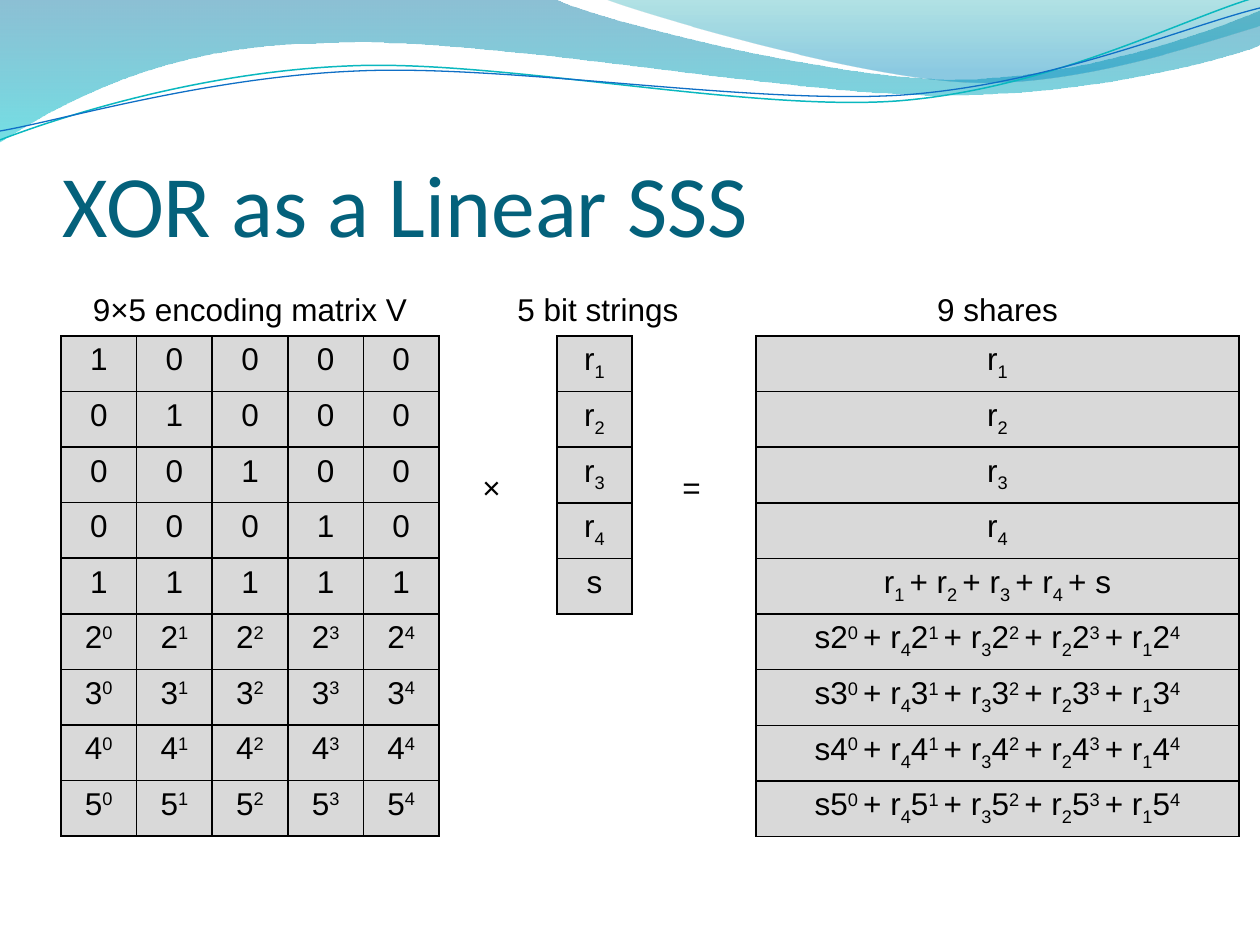
"""Build the slide that shows XOR secret sharing as a matrix product."""
import math
from itertools import accumulate, chain, groupby

from lxml import etree
from pptx import Presentation
from pptx import util as u
from pptx.dml.color import RGBColor
from pptx.enum import text
from pptx.oxml.ns import qn

PX = 7257.6
LEFT, CENTER = text.PP_ALIGN.LEFT, text.PP_ALIGN.CENTER
SUBS, SUPS = "₀₁₂₃₄₅", "⁰¹²³⁴⁵"
BASES, DEGREES = range(2, 6), range(5)

TITLE = ("XOR as a Linear SSS", 63, 97, 1134, 158)
LABELS = [
    ("9×5 encoding matrix V", 61, 284, 378, CENTER, True),
    ("5 bit strings", 472, 284, 252, CENTER, True),
    ("9 shares", 756, 284, 483, CENTER, True),
    ("×", 470, 462, 44, LEFT, False),
    ("=", 670, 462, 44, LEFT, False),
]

IDENTITY = [[str(int(row == col)) for col in DEGREES] for row in range(4)]
POWERS = [[f"{base}{SUPS[degree]}" for degree in DEGREES] for base in BASES]
SECRETS = ["r₁", "r₂", "r₃", "r₄", "s"]
MIRRORED = ["s", "r₄", "r₃", "r₂", "r₁"]
SUMS = [" + ".join(SECRETS)] + [
    " + ".join(secret + power for secret, power in zip(MIRRORED, row)) for row in POWERS
]
TABLE_TOP, ROW_HEIGHT = 336, 500 / 9
TABLES = [
    (61, 378, IDENTITY + [["1"] * 5] + POWERS),
    (557, 75, [[secret] for secret in SECRETS]),
    (756, 483, [[share] for share in SECRETS[:4] + SUMS]),
]

# Each step holds one point for a straight line or three for a curve.
BANDS = [
    ([[(0, -1)], [(554, -1)], [(600, 21), (837, 79), (955, 79)],
      [(1075, 79), (1207, 33), (1260, 11)], [(1261, 45)],
      [(1239, 55), (1096, 96), (940, 95)], [(784, 95), (481, 35), (324, 43)],
      [(163, 44), (58, 105), (-1, 142)], [(0, -1)]],
     [(0, "0074A1", 45), (1, "00C6CF", 55)]),
    ([[(604, -1)], [(641, 14), (859, 78), (969, 82)],
      [(1079, 87), (1211, 40), (1260, 26)], [(1260, 0)], [(604, -1)]],
     [(0, "00A1A9", 30), (0.8, "008BBF", 45)]),
]
WAVES = [
    ([[(0, 140)], [(60, 117), (199, 72), (349, 66)],
      [(498, 59), (747, 112), (898, 101)], [(1050, 89), (1182, 19), (1257, -3)]],
     (629, 72), "0AB8BF", 0.85),
    ([[(0, 131)], [(59, 121), (207, 77), (357, 71)],
      [(508, 64), (752, 105), (903, 95)], [(1053, 84), (1186, 26), (1260, 8)]],
     (629, 74), "0F6FC6", 0.75),
]
TILT = 2.7


def px(value):
    return u.Emu(round(value * PX))


def color(code):
    return RGBColor.from_string(code)


def turn(steps, center, degrees):
    cx, cy = center
    c, s = math.cos(math.radians(degrees)), math.sin(math.radians(degrees))
    return [[(cx + (x - cx) * c - (y - cy) * s, cy + (x - cx) * s + (y - cy) * c)
             for x, y in step] for step in steps]


def add_outline(page, steps, close):
    points = [(px(x), px(y)) for x, y in chain(*steps)]
    builder = page.shapes.build_freeform(*points[0])
    builder.add_line_segments(points[1:], close=close)
    shape = builder.convert_to_shape()
    shape.shadow.inherit = False
    lines = iter(list(shape.element.spPr.iter(qn("a:lnTo"))))
    for step in steps[1:]:
        parts = [next(lines) for _ in step]
        if len(step) == 3:
            curve = etree.Element(qn("a:cubicBezTo"))
            parts[0].addprevious(curve)
            for part in parts:
                curve.append(part[0])
                part.getparent().remove(part)
    return shape


def add_band(page, steps, stops):
    band = add_outline(page, steps, True)
    band.line.fill.background()
    band.fill.gradient()
    band.fill.gradient_angle = 270
    for stop, (position, code, opacity) in zip(band.fill.gradient_stops, stops):
        stop.position = position
        stop.color.rgb = color(code)
    for tint, stop in zip(band.element.spPr.iter(qn("a:srgbClr")), stops):
        etree.SubElement(tint, qn("a:alpha"), val=str(stop[2] * 1000))


def add_wave(page, steps, center, code, width):
    wave = add_outline(page, turn(steps, center, TILT), False)
    wave.rotation = 360 - TILT
    wave.fill.background()
    wave.line.color.rgb = color(code)
    wave.line.width = u.Pt(width)


def level(previous, char):
    if char == " ":
        return previous
    return -25 if char in SUBS else 30 if char in SUPS else 0


def write(frame, words, align=CENTER, size=18, font="Arial", code="000000"):
    para = frame.paragraphs[0]
    para.alignment = align
    para.font.size, para.font.name = u.Pt(size), font
    para.font.color.rgb = color(code)
    levels = list(accumulate(words, level, initial=0))[1:]
    plain = words.translate(str.maketrans(SUBS + SUPS, "012345" * 2))
    for shift, group in groupby(zip(levels, plain), key=lambda pair: pair[0]):
        span = para.add_run()
        span.text = "".join(char for _, char in group)
        if shift:
            span.font._element.set("baseline", str(shift * 1000))


def add_matrix(page, left, width, rows):
    columns = len(rows[0])
    frame = page.shapes.add_table(len(rows), columns, px(left), px(TABLE_TOP),
                                  px(width), px(ROW_HEIGHT * len(rows)))
    table = frame.table
    table.first_row = table.horz_banding = False
    for column in table.columns:
        column.width = px(width / columns)
    for row, values in zip(table.rows, rows):
        row.height = px(ROW_HEIGHT)
        for cell, words in zip(row.cells, values):
            write(cell.text_frame, words)
            for side in "LRTB":
                edge = etree.SubElement(cell._tc.get_or_add_tcPr(),
                                        qn(f"a:ln{side}"), w="12700")
                paint = etree.SubElement(edge, qn("a:solidFill"))
                etree.SubElement(paint, qn("a:srgbClr"), val="000000")
            cell.fill.solid()
            cell.fill.fore_color.rgb = color("D9D9D9")


def add_title(page, words, *place):
    frame = page.shapes.add_textbox(*map(px, place)).text_frame
    frame.word_wrap = True
    frame.vertical_anchor = text.MSO_ANCHOR.BOTTOM
    frame.margin_left = frame.margin_right = frame.margin_bottom = 0
    write(frame, words, LEFT, 50, "Calibri", "04617B")


def add_label(page, words, left, top, width, align, wrap):
    box = page.shapes.add_textbox(px(left), px(top), px(width), px(50))
    box.text_frame.word_wrap = wrap
    write(box.text_frame, words, align)


def main():
    deck = Presentation()
    deck.slide_width, deck.slide_height = px(1260), px(945)
    page = deck.slides.add_slide(deck.slide_layouts[6])
    for add, items in ((add_band, BANDS), (add_wave, WAVES), (add_title, [TITLE]),
                       (add_matrix, TABLES), (add_label, LABELS)):
        for item in items:
            add(page, *item)
    deck.save("out.pptx")


if __name__ == "__main__":
    main()
